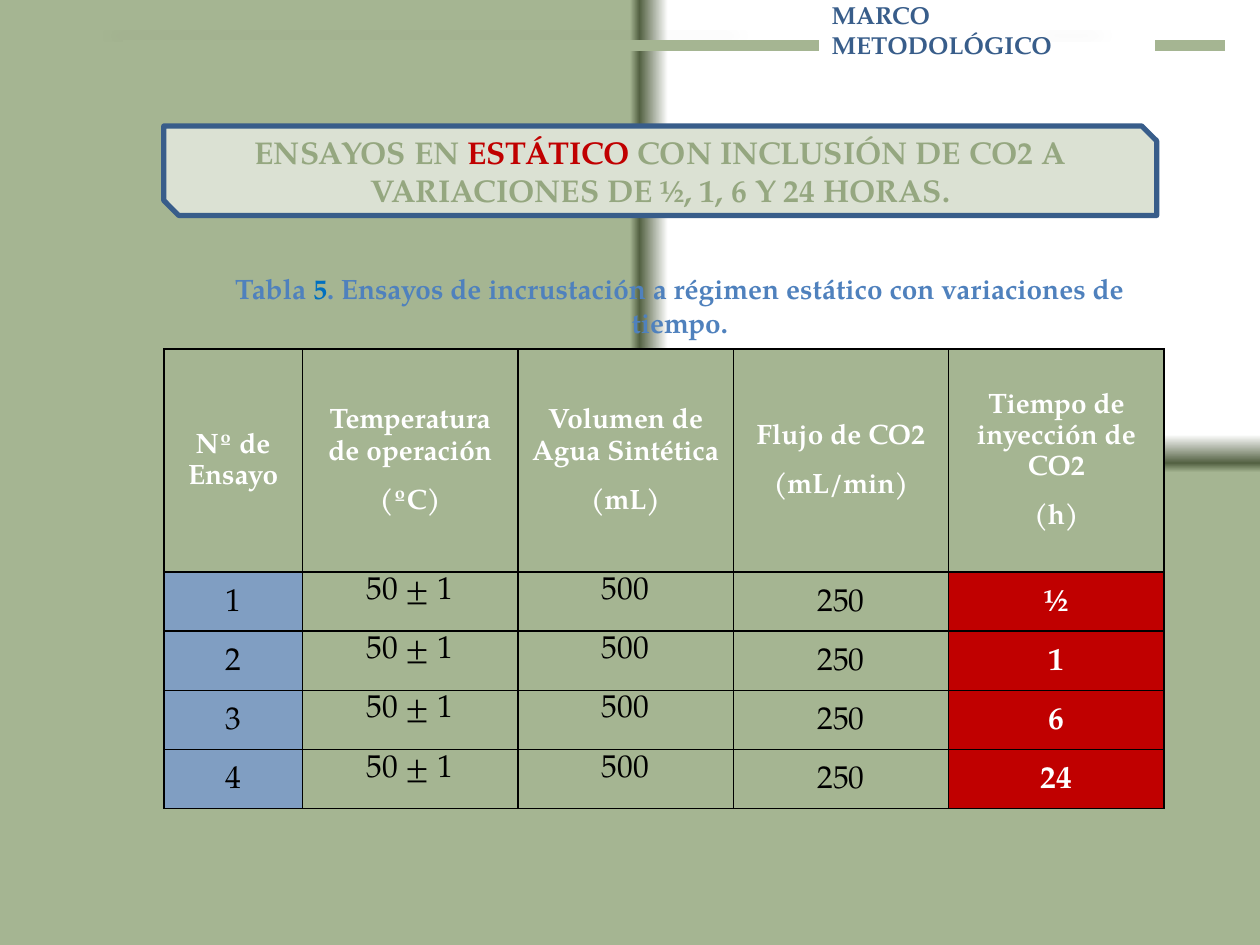
from pptx import Presentation
from pptx.util import Inches, Pt
from pptx.dml.color import RGBColor as RGB
from pptx.enum.shapes import MSO_CONNECTOR as CONN, MSO_SHAPE as SHAPE
from pptx.enum.text import MSO_ANCHOR as ANCHOR, MSO_AUTO_SIZE as AUTO, PP_ALIGN as ALIGN
from pptx.oxml import parse_xml
from pptx.oxml.ns import nsdecls, qn

FONT = "TeX Gyre Pagella"
HEX = {"green": "A5B592", "pale": "DBE1D3", "navy": "385D8A", "blue": "4F81BD",
       "sky": "0070C0", "steel": "809EC2", "red": "C00000", "white": "FFFFFF",
       "black": "000000"}


def write(para, parts, size, bold=True, align=ALIGN.CENTER):
    """Add (text, colour) runs to a paragraph and return them."""
    para.alignment = align
    runs = []
    for text, tint in parts:
        run = para.add_run()
        run.text = text
        form = {"name": FONT, "size": Pt(size), "bold": bold}
        for key, val in form.items():
            setattr(run.font, key, val)
        run.font.color.rgb = RGB.from_string(HEX[tint])
        runs.append(run)
    return runs


def blend(stops, shade):
    """Make a gradient fill from (percent, hex) stops."""
    marks = "".join(f'<a:gs pos="{pos * 1000}"><a:srgbClr val="{tint}"/></a:gs>'
                    for pos, tint in stops)
    return parse_xml(f'<a:gradFill {nsdecls("a")} rotWithShape="1">'
                     f'<a:gsLst>{marks}</a:gsLst>{shade}</a:gradFill>')


deck = Presentation()
deck.slide_width, deck.slide_height = Inches(10), Inches(7.5)
slide = deck.slides.add_slide(deck.slide_layouts[5])
shapes = slide.shapes

# Background: gradient from the top right corner
slide.background.fill.solid()
back = slide.element.find(".//" + qn("p:bgPr"))
back.replace(back[0], blend(
    [(0, "FFFFFF"), (92, "FFFFFF"), (98, "536142"), (100, "A5B592")],
    '<a:path path="rect"><a:fillToRect l="100000" b="100000"/></a:path>'))

# Title
title = shapes.title
title.left, title.top = Inches(6.5), Inches(0.17)
title.width, title.height = Inches(2.68), Inches(0.35)
frame = title.text_frame
form = {"word_wrap": True, "auto_size": AUTO.NONE, "vertical_anchor": ANCHOR.BOTTOM}
for key, val in form.items():
    setattr(frame, key, val)
write(frame.paragraphs[0], [("MARCO METODOLÓGICO", "navy")], 14, align=ALIGN.LEFT)

# Bars on both sides of the title
for start, end in ((0.98, 6.5), (9.17, 9.72)):
    bar = shapes.add_connector(CONN.STRAIGHT, Inches(start), Inches(0.36),
                               Inches(end), Inches(0.36))
    bar.line.color.rgb = RGB.from_string(HEX["green"])
    bar.line.width = Pt(6.5)
    bar._element.spPr.append(parse_xml(
        f'<a:effectLst {nsdecls("a")}><a:outerShdw blurRad="152400" dist="317500" '
        'dir="5400000" sx="90000" sy="-19000" rotWithShape="0"><a:srgbClr val="000000">'
        '<a:alpha val="15000"/></a:srgbClr></a:outerShdw></a:effectLst>'))

# Banner
banner = shapes.add_shape(SHAPE.SNIP_2_DIAG_RECTANGLE, Inches(1.3), Inches(1),
                          Inches(7.88), Inches(0.71))
banner.shadow.inherit = False
banner.fill.solid()
banner.fill.fore_color.rgb = RGB.from_string(HEX["pale"])
banner.line.color.rgb = RGB.from_string(HEX["navy"])
banner.line.width = Pt(3)
banner.text_frame.vertical_anchor = ANCHOR.MIDDLE
runs = write(banner.text_frame.paragraphs[0], [
    ("ENSAYOS EN ", "green"), ("ESTÁTICO", "red"),
    (" CON INCLUSIÓN DE CO2 A VARIACIONES DE ½, 1, 6 Y 24 HORAS.", "green")], 18)
for run in runs[::2]:
    props = run.font._element
    props.replace(props.find(qn("a:solidFill")), blend(
        [(0, "AABA9A"), (49, "95A780"), (50, "899A75"), (92, "7A8869"), (100, "788668")],
        '<a:lin ang="5400000"/>'))

# Table
heads = [["Nº de Ensayo"], ["Temperatura de operación", "(ºC)"],
         ["Volumen de Agua Sintética", "(mL)"], ["Flujo de CO2", "(mL/min)"],
         ["Tiempo de inyección de CO2", "(h)"]]
rows = [heads] + [[[str(num)], ["50 ± 1"], ["500"], ["250"], [time]]
                  for num, time in enumerate(["½", "1", "6", "24"], 1)]
table = shapes.add_table(5, 5, Inches(1.3), Inches(2.77),
                         Inches(7.95), Inches(3.66)).table
table.first_row = table.horz_banding = False
for i in range(5):
    table.columns[i].width = Inches(1.71 if i else 1.1)
    table.rows[i].height = Inches(0.47 if i else 1.77)
fills = ["steel", None, None, None, "red"]
for r, row in enumerate(rows):
    for c, lines in enumerate(row):
        cell = table.cell(r, c)
        head = r == 0
        form = {"margin_left": Inches(0.07), "margin_right": Inches(0.07),
                "margin_top": 0, "margin_bottom": 0,
                "vertical_anchor": ANCHOR.TOP if r and c in (1, 2) else ANCHOR.MIDDLE}
        for key, val in form.items():
            setattr(cell, key, val)
        strong = head or c == 4
        for n, text in enumerate(lines):
            para = cell.text_frame.add_paragraph() if n else cell.text_frame.paragraphs[0]
            para.line_spacing, para.space_after = 1.15, Pt(10)
            write(para, [(text, "white" if strong else "black")], 16 if head else 18, strong)
        # Borders go before the fill
        for side in ("lnL", "lnR", "lnT", "lnB"):
            cell._tc.get_or_add_tcPr().append(parse_xml(
                f'<a:{side} {nsdecls("a")} w="12700"><a:solidFill>'
                f'<a:srgbClr val="{HEX["black"]}"/></a:solidFill></a:{side}>'))
        tint = "green" if head else fills[c]
        if tint:
            cell.fill.solid()
            cell.fill.fore_color.rgb = RGB.from_string(HEX[tint])
        else:
            cell.fill.background()

# Table caption
note = shapes.add_textbox(Inches(1.46), Inches(2.11), Inches(7.87), Inches(0.64))
note.text_frame.word_wrap = True
note.text_frame.auto_size = AUTO.SHAPE_TO_FIT_TEXT
write(note.text_frame.paragraphs[0], [
    ("Tabla ", "blue"), ("5", "sky"),
    (". Ensayos de incrustación a régimen estático con variaciones de tiempo.", "blue")], 16)

deck.save("out.pptx")
